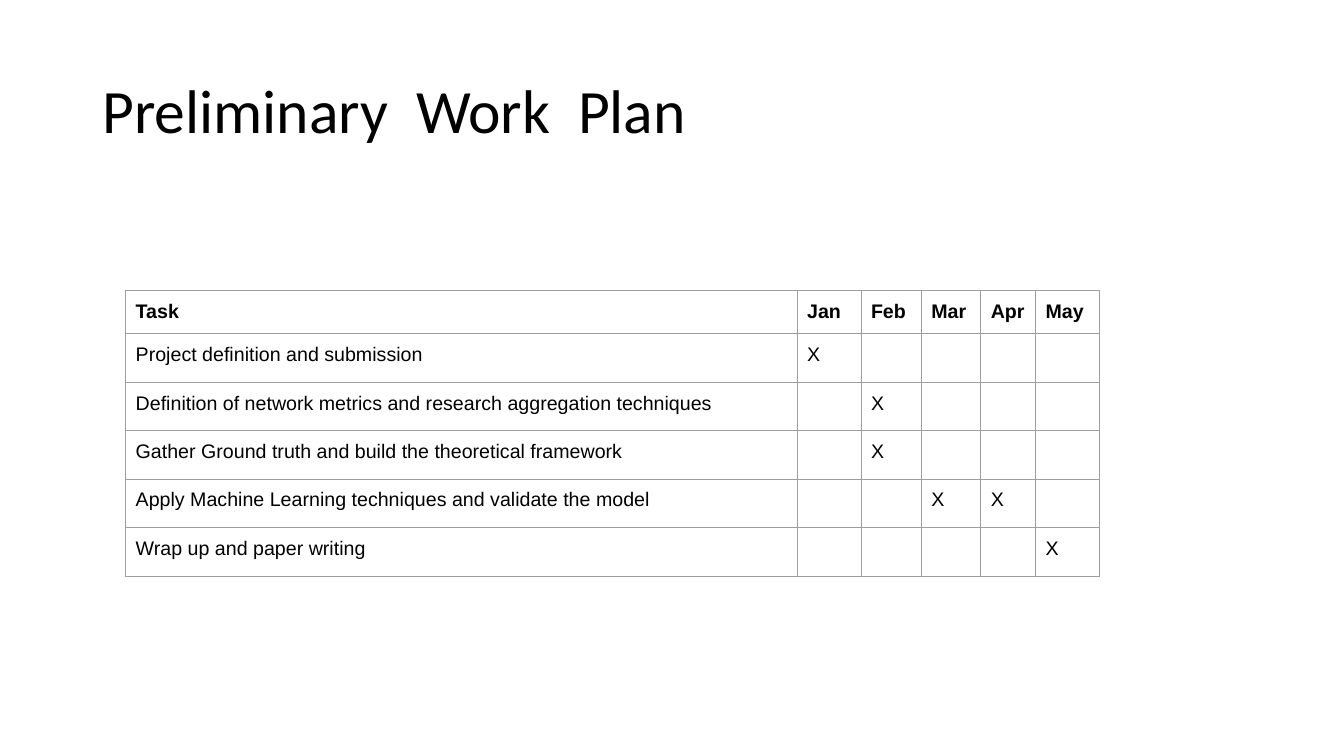
from lxml.etree import SubElement
from pptx import Presentation
from pptx.dml.color import RGBColor
from pptx.enum.text import MSO_ANCHOR as Anchor
from pptx.oxml.ns import qn
from pptx.util import Cm, Pt

BLACK = RGBColor(0x00, 0x00, 0x00)
GRID_GREY = RGBColor(0x9E, 0x9E, 0x9E)

MONTHS = ["Jan", "Feb", "Mar", "Apr", "May"]
TASKS = [
    ("Project definition and submission", ["Jan"]),
    ("Definition of network metrics and research aggregation techniques", ["Feb"]),
    ("Gather Ground truth and build the theoretical framework", ["Feb"]),
    ("Apply Machine Learning techniques and validate the model", ["Mar", "Apr"]),
    ("Wrap up and paper writing", ["May"]),
]
COLUMN_WIDTHS = [Cm(w) for w in (16.92, 1.61, 1.52, 1.5, 1.38, 1.6)]
HEADER_HEIGHT, TASK_HEIGHT = Cm(1.06), Cm(1.22)
CELL_MARGIN = Cm(0.25)


def style_font(paragraph, name, size, bold=False):
    font = paragraph.font
    font.name, font.size, font.bold = name, Pt(size), bold
    font.color.rgb = BLACK


def outline_cell(cell):
    properties = cell._tc.get_or_add_tcPr()
    for position, side in enumerate(("lnL", "lnR", "lnT", "lnB")):
        line = SubElement(properties, qn(f"a:{side}"), w=str(Pt(0.75)))
        fill = SubElement(line, qn("a:solidFill"))
        SubElement(fill, qn("a:srgbClr"), val=str(GRID_GREY))
        properties.insert(position, line)


def add_title(slide, left, top, width, height):
    frame = slide.shapes.add_textbox(left, top, width, height).text_frame
    frame.word_wrap = True
    frame.vertical_anchor = Anchor.MIDDLE
    heading = frame.paragraphs[0]
    heading.text = "Preliminary  Work  Plan"
    heading.line_spacing = 0.9
    style_font(heading, "Calibri", 44)


def add_work_plan(slide, left, top):
    schedule = [["Task", *MONTHS]]
    for task, active in TASKS:
        schedule.append([task, *("X" if month in active else "" for month in MONTHS)])
    heights = [HEADER_HEIGHT] + [TASK_HEIGHT] * len(TASKS)

    plan = slide.shapes.add_table(
        len(heights), len(COLUMN_WIDTHS), left, top, sum(COLUMN_WIDTHS), sum(heights)
    ).table
    plan.first_row = plan.horz_banding = False
    for column, width in zip(plan.columns, COLUMN_WIDTHS):
        column.width = width
    for row, height in zip(plan.rows, heights):
        row.height = height

    for row_index, entries in enumerate(schedule):
        for column_index, entry in enumerate(entries):
            cell = plan.cell(row_index, column_index)
            cell.margin_left = cell.margin_right = CELL_MARGIN
            cell.margin_top = cell.margin_bottom = CELL_MARGIN
            cell.text = entry
            style_font(cell.text_frame.paragraphs[0], "Arial", 14, row_index == 0)
            cell.fill.background()
            outline_cell(cell)


def main():
    presentation = Presentation()
    presentation.slide_width, presentation.slide_height = Cm(33.87), Cm(19.05)
    slide = presentation.slides.add_slide(presentation.slide_layouts[6])
    add_title(slide, Cm(2.33), Cm(1.01), Cm(29.21), Cm(3.68))
    add_work_plan(slide, Cm(3.17), Cm(7.32))
    presentation.save("out.pptx")


if __name__ == "__main__":
    main()
